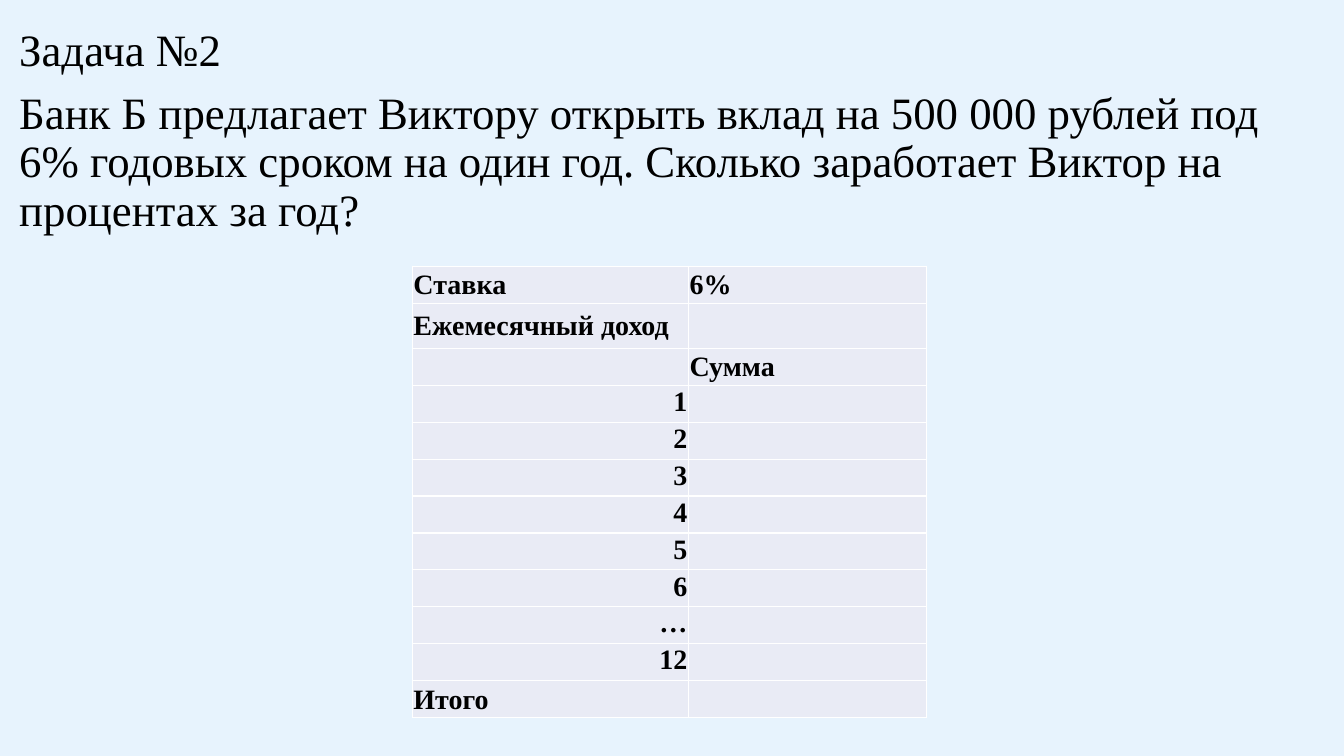
from dataclasses import dataclass

from lxml import etree
from pptx import Presentation
from pptx import util as u
from pptx.dml.color import RGBColor
from pptx.enum import text
from pptx.oxml import ns

FONT = "Times New Roman"
BLACK = "000000"
WHITE = "FFFFFF"
BACKGROUND = "E7F3FD"
CELL_FILL = "E9EBF5"
TASK = (
    "Задача №2",
    "Банк Б предлагает Виктору открыть вклад на 500 000 рублей под 6% годовых "
    "сроком на один год. Сколько заработает Виктор на процентах за год?",
)
MONTHS = ("1", "2", "3", "4", "5", "6", "…", "12")


@dataclass(frozen=True)
class DepositRow:
    label: str = ""
    amount: str = ""
    height: float = 0.93
    is_month: bool = False


DEPOSIT_ROWS = [
    DepositRow("Ставка", "6%"),
    DepositRow("Ежемесячный доход", height=1.14),
    DepositRow(amount="Сумма"),
    *(DepositRow(month, is_month=True) for month in MONTHS),
    DepositRow("Итого"),
]


def paint(target, colour: str) -> None:
    target.solid()
    target.fore_color.rgb = RGBColor.from_string(colour)


def write(paragraph, wording: str, *, size: float, bold: bool = False,
          align=text.PP_ALIGN.LEFT, colour: str = BLACK) -> None:
    paragraph.alignment = align
    run = paragraph.add_run()
    run.text = wording
    run.font.name = FONT
    run.font.size = u.Pt(size)
    run.font.bold = bold
    paint(run.font.fill, colour)


def add_borders(cell, colour: str, width: float) -> None:
    properties = cell._tc.get_or_add_tcPr()
    for side in ("lnL", "lnR", "lnT", "lnB"):
        line = etree.SubElement(properties, ns.qn(f"a:{side}"), w=str(u.Pt(width)))
        fill = etree.SubElement(line, ns.qn("a:solidFill"))
        etree.SubElement(fill, ns.qn("a:srgbClr"), val=colour)


def format_cell(cell, wording: str, is_month: bool) -> None:
    cell.margin_left = cell.margin_right = cell.margin_top = u.Cm(0.03)
    cell.margin_bottom = 0
    cell.vertical_anchor = text.MSO_ANCHOR.TOP if is_month else text.MSO_ANCHOR.MIDDLE
    add_borders(cell, WHITE, 1)
    paint(cell.fill, CELL_FILL)
    if wording:
        align = text.PP_ALIGN.RIGHT if is_month else text.PP_ALIGN.LEFT
        write(cell.text_frame.paragraphs[0], wording, size=20, bold=True, align=align)


def fill_task(task) -> None:
    task.left, task.top = u.Cm(0.23), u.Cm(0.58)
    task.width, task.height = u.Cm(32.08), u.Cm(10.87)
    frame = task.text_frame
    frame.word_wrap = True
    frame.auto_size = text.MSO_AUTO_SIZE.NONE
    frame.vertical_anchor = text.MSO_ANCHOR.TOP
    for index, wording in enumerate(TASK):
        paragraph = frame.add_paragraph() if index else frame.paragraphs[0]
        paragraph.line_spacing = 0.9
        paragraph.space_before = u.Pt(10)
        write(paragraph, wording, size=32)
        properties = paragraph._p.get_or_add_pPr()
        properties.set("marL", "0")
        properties.set("indent", "0")
        etree.SubElement(properties, ns.qn("a:buNone"))


def add_deposit_table(slide) -> None:
    widths = (6.96, 5.99)
    height = sum(row.height for row in DEPOSIT_ROWS)
    deposit = slide.shapes.add_table(
        len(DEPOSIT_ROWS), len(widths),
        u.Cm(10.39), u.Cm(6.71), u.Cm(sum(widths)), u.Cm(height),
    ).table
    deposit.horz_banding = False
    deposit.first_row = False
    for column, width in zip(deposit.columns, widths):
        column.width = u.Cm(width)
    for table_row, row in zip(deposit.rows, DEPOSIT_ROWS):
        table_row.height = u.Cm(row.height)
        for cell, wording in zip(table_row.cells, (row.label, row.amount)):
            format_cell(cell, wording, row.is_month)


def main() -> None:
    presentation = Presentation()
    presentation.slide_width, presentation.slide_height = u.Cm(33.87), u.Cm(19.05)
    slide = presentation.slides.add_slide(presentation.slide_layouts[1])
    paint(slide.background.fill, BACKGROUND)
    empty_title = slide.shapes.title.element
    empty_title.getparent().remove(empty_title)
    fill_task(slide.placeholders[1])
    add_deposit_table(slide)
    presentation.save("out.pptx")


if __name__ == "__main__":
    main()
